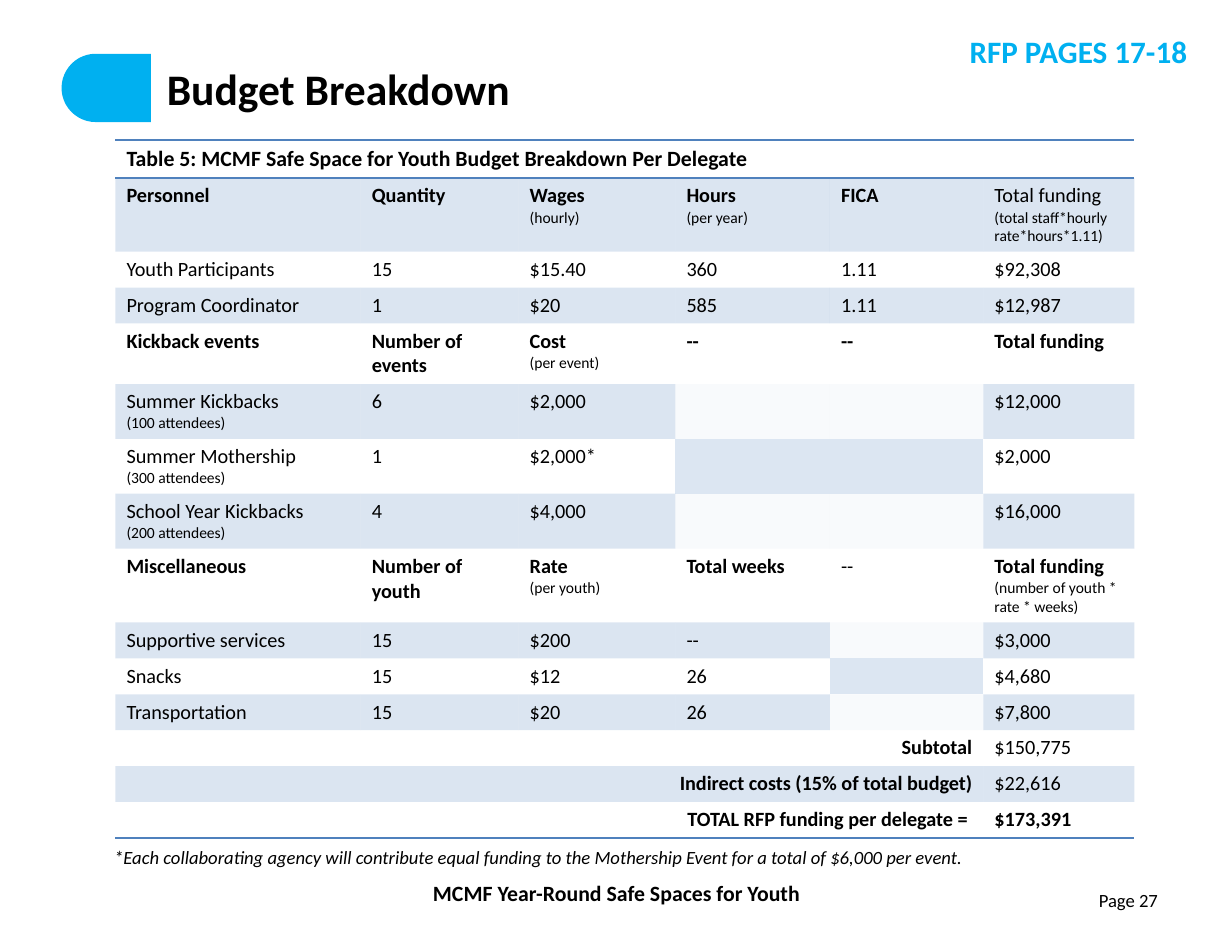
from dataclasses import dataclass

from lxml import etree
from pptx import Presentation
from pptx.dml.color import RGBColor
from pptx.enum.shapes import MSO_SHAPE
from pptx.enum.text import MSO_ANCHOR as Anchor, MSO_AUTO_SIZE as AutoSize, PP_ALIGN as Align
from pptx.oxml.ns import qn
from pptx.util import Inches, Pt

FONT = "Calibri"
BLACK = RGBColor(0x00, 0x00, 0x00)
WHITE = RGBColor(0xFF, 0xFF, 0xFF)
CYAN = RGBColor(0x00, 0xB0, 0xF0)
TABLE_BLUE = RGBColor(0x4F, 0x81, 0xBD)
PALE_BLUE = RGBColor(0xDC, 0xE6, 0xF2)
PLAIN_STYLE = "{2D5ABB26-0587-4C30-8999-92F81FD0307C}"


@dataclass
class Entry:
    """A table entry: text, then an optional small note."""
    text: str
    note: str = ""
    bold: bool = False


@dataclass
class Row:
    height: float
    entries: list
    span: int = 1


@dataclass
class Label:
    text: str
    box: tuple
    size: float
    align: Align = Align.LEFT
    color: RGBColor = BLACK
    bold: bool = False
    italic: bool = False
    margins: tuple = (0.1, 0.05)


def head(text: str, note: str = "") -> Entry:
    return Entry(text, note, bold=True)


COLUMN_WIDTHS = [2.19, 1.41, 1.4, 1.38, 1.37, 1.35]
LINE = 0.32
# In an entry, \v breaks the line and \n starts a paragraph; None is a shaded blank
ROWS = [
    Row(0.34, [head("Table 5: MCMF Safe Space for Youth Budget Breakdown Per Delegate")], span=6),
    Row(0.65, [head("Personnel"), head("Quantity"), head("Wages \v", "(hourly)"),
               head("Hours \v", "(per year)"), head("FICA"),
               Entry("Total funding ", "(total staff*hourly rate*hours*1.11)")]),
    Row(LINE, ["Youth Participants", "15", "$15.40", "360", "1.11", "$92,308"]),
    Row(LINE, ["Program Coordinator", "1", "$20", "585", "1.11", "$12,987"]),
    Row(0.54, [head("Kickback events"), head("Number of events"),
               head("Cost \v", "(per event)"), head("--"), head("--"), head("Total funding")]),
    Row(0.49, [Entry("Summer Kickbacks \v", "(100 attendees)"), "6", "$2,000",
               None, None, "$12,000"]),
    Row(0.49, [Entry("Summer Mothership\n", "(300 attendees)"), "1", "$2,000*",
               None, None, "$2,000"]),
    Row(0.49, [Entry("School Year Kickbacks\n", "(200 attendees)"), "4", "$4,000",
               None, None, "$16,000"]),
    Row(0.66, [head("Miscellaneous"), head("Number of youth"), head("Rate \v", "(per youth)"),
               head("Total weeks"), "--",
               head("Total funding ", "(number of youth * rate * weeks)")]),
    Row(LINE, ["Supportive services", "15", "$200", "--", None, "$3,000"]),
    Row(LINE, ["Snacks", "15", "$12", "26", None, "$4,680"]),
    Row(LINE, ["Transportation", "15", "$20", "26", None, "$7,800"]),
    Row(LINE, [head("Subtotal"), "$150,775"], span=5),
    Row(LINE, [head("Indirect costs (15% of total budget)"), "$22,616"], span=5),
    Row(LINE, [head("TOTAL RFP funding per delegate = "), head("$173,391")], span=5),
]

TITLE = Label("Budget Breakdown", (1.38, 0.51, 9.07, 0.55), 28, bold=True, margins=(0.11, 0.06))
FOOTNOTE = Label(
    "*Each collaborating agency will contribute equal funding to the Mothership Event "
    "for a total of $6,000 per event.",
    (0.91, 7.46, 9.16, 0.44), 12, italic=True, margins=(0.11, 0.06))
LABELS = [
    Label("MCMF Year-Round Safe Spaces for Youth", (2.66, 7.81, 5.69, 0.34), 14,
          Align.CENTER, bold=True),
    Label("Page 27", (7.88, 7.88, 2.57, 0.45), 12, Align.RIGHT, margins=(0.11, 0.06)),
    Label("RFP PAGES 17-18", (5.18, 0.24, 5.52, 0.44), 20, Align.RIGHT, CYAN, bold=True),
]


def style_font(font, size: float, bold: bool = False, color: RGBColor = BLACK) -> None:
    font.name, font.size, font.bold = FONT, Pt(size), bold
    font.color.rgb = color


def write_label(shape, label: Label) -> None:
    shape.left, shape.top, shape.width, shape.height = map(Inches, label.box)
    frame = shape.text_frame
    frame.text = label.text
    frame.word_wrap = True
    frame.auto_size = AutoSize.NONE
    frame.margin_left = frame.margin_right = Inches(label.margins[0])
    frame.margin_top = frame.margin_bottom = Inches(label.margins[1])
    paragraph = frame.paragraphs[0]
    paragraph.alignment = label.align
    style_font(paragraph.runs[0].font, label.size, label.bold, label.color)
    paragraph.runs[0].font.italic = label.italic


def add_backdrop(slide, kind, box: tuple, color: RGBColor):
    """Draw a plain shape behind everything already on the slide."""
    shape = slide.shapes.add_shape(kind, *map(Inches, box))
    shape.shadow.inherit = False
    shape.fill.solid()
    shape.fill.fore_color.rgb = color
    shape.line.fill.background()
    slide.shapes._spTree.insert(2, shape._element)
    return shape


def fill_cell(cell, color: RGBColor, opacity: int = 100) -> None:
    cell.fill.solid()
    cell.fill.fore_color.rgb = color
    if opacity < 100:
        swatch = cell._tc.tcPr.find(".//" + qn("a:srgbClr"))
        etree.SubElement(swatch, qn("a:alpha"), val=str(opacity * 1000))


def add_border(cell, side: str) -> None:
    line = etree.Element(qn(f"a:ln{side}"), w=str(Pt(1)))
    fill = etree.SubElement(line, qn("a:solidFill"))
    etree.SubElement(fill, qn("a:srgbClr"), val=str(TABLE_BLUE))
    cell._tc.get_or_add_tcPr().insert(0, line)


def write_entry(cell, entry: Entry, size: float) -> None:
    frame = cell.text_frame
    frame.text = entry.text
    for run in frame.paragraphs[0].runs:
        style_font(run.font, size, entry.bold)
    if entry.note:
        note = frame.paragraphs[-1].add_run()
        note.text = entry.note
        style_font(note.font, 10)


def add_budget_table(slide) -> None:
    frame = slide.shapes.add_table(
        len(ROWS), len(COLUMN_WIDTHS), Inches(1.03), Inches(1.25),
        Inches(sum(COLUMN_WIDTHS)), Inches(sum(row.height for row in ROWS)))
    table = frame.table
    table.first_row = table.horz_banding = False
    table._tbl.tblPr.find(qn("a:tableStyleId")).text = PLAIN_STYLE
    for column, width in zip(table.columns, COLUMN_WIDTHS):
        column.width = Inches(width)

    for index, row in enumerate(ROWS):
        table.rows[index].height = Inches(row.height)
        cells = list(table.rows[index].cells)
        # Bands and rules
        for cell in cells:
            if index % 2:
                fill_cell(cell, TABLE_BLUE, opacity=20)
            else:
                cell.fill.background()
            if index in (0, len(ROWS) - 1):
                add_border(cell, "B")
            if index == 0:
                add_border(cell, "T")
        # Entries
        if row.span > 1:
            cells[0].merge(cells[row.span - 1])
        if row.span == 5:
            cells[0].text_frame.paragraphs[0].alignment = Align.RIGHT
        for cell, entry in zip([cells[0]] + cells[row.span:], row.entries):
            if entry is None:
                fill_cell(cell, PALE_BLUE)
                paragraph = cell.text_frame.paragraphs[0]
                etree.SubElement(paragraph._p, qn("a:endParaRPr"), sz="1300")
                continue
            if isinstance(entry, str):
                entry = Entry(entry)
            write_entry(cell, entry, 14 if index == 0 else 13)
            if row.span == 5 and cell is cells[0]:
                cell.text_frame.paragraphs[0].alignment = Align.RIGHT


def main() -> None:
    presentation = Presentation()
    presentation.slide_width, presentation.slide_height = Inches(11), Inches(8.5)
    slide = presentation.slides.add_slide(presentation.slide_layouts[1])

    # Title and its rounded tab
    write_label(slide.shapes.title, TITLE)
    slide.shapes.title.text_frame.vertical_anchor = Anchor.MIDDLE
    panel = add_backdrop(slide, MSO_SHAPE.RECTANGLE, (1.36, 0.41, 7.67, 0.86), WHITE)
    panel.line.color.rgb = WHITE
    panel.line.width = Pt(2)
    tab = add_backdrop(slide, MSO_SHAPE.ROUNDED_RECTANGLE, (0.55, 0.48, 8.44, 0.61), CYAN)
    tab.adjustments[0] = 0.5

    add_budget_table(slide)

    # Footnote without a bullet
    footnote = slide.placeholders[1]
    write_label(footnote, FOOTNOTE)
    paragraph = footnote.text_frame.paragraphs[0]
    paragraph.line_spacing = 1.15
    paragraph.space_before = Pt(0)
    properties = paragraph._p.get_or_add_pPr()
    properties.set("marL", "0")
    properties.set("indent", "0")
    etree.SubElement(properties, qn("a:buNone"))

    # Header and footer labels
    for label in LABELS:
        write_label(slide.shapes.add_textbox(*map(Inches, label.box)), label)

    presentation.save("out.pptx")


if __name__ == "__main__":
    main()
